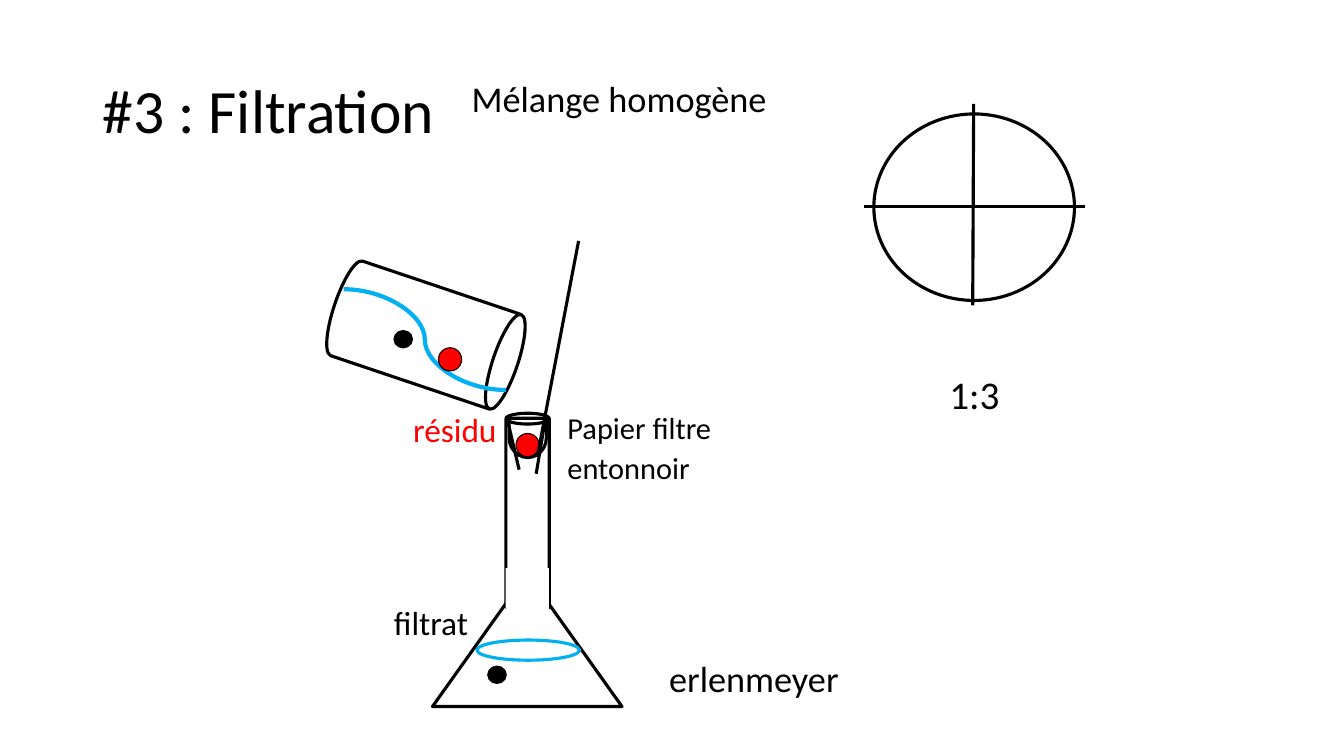
from dataclasses import dataclass

from lxml import etree
from pptx import Presentation
from pptx.dml.color import RGBColor
from pptx.enum.shapes import MSO_CONNECTOR as Connector
from pptx.enum.shapes import MSO_SHAPE as Shape
from pptx.enum.text import MSO_ANCHOR as Anchor
from pptx.oxml.ns import qn
from pptx.util import Pt


@dataclass(frozen=True)
class Theme:
    font: str = "Calibri"
    black: RGBColor = RGBColor(0, 0, 0)
    white: RGBColor = RGBColor(255, 255, 255)
    red: RGBColor = RGBColor(255, 0, 0)
    water: RGBColor = RGBColor(0, 176, 240)
    title: float = 44
    ratio: float = 28
    label: float = 25.9
    product: float = 23.8
    equipment: float = 21.7
    outline: float = 2.25
    wave: float = 3


THEME = Theme()


def add_label(slide, box, lines, size, color=THEME.black, spacing=0.9, before=10,
              anchor=Anchor.TOP):
    frame = slide.shapes.add_textbox(*map(Pt, box)).text_frame
    frame.word_wrap = True
    frame.vertical_anchor = anchor
    frame.text = "\n".join(lines)
    for paragraph in frame.paragraphs:
        paragraph.line_spacing = spacing
        paragraph.space_before = Pt(before)
        paragraph.font.name = THEME.font
        paragraph.font.size = Pt(size)
        paragraph.font.color.rgb = color


def add_part(slide, kind, box, fill=None, line=THEME.black, width=THEME.outline, rotation=0):
    part = slide.shapes.add_shape(kind, *map(Pt, box))
    part.shadow.inherit = False
    part.rotation = rotation
    if fill is None:
        part.fill.background()
    else:
        part.fill.solid()
        part.fill.fore_color.rgb = fill
    if line is None:
        part.line.fill.background()
    else:
        part.line.color.rgb = line
        part.line.width = Pt(width)


def add_stroke(slide, start, end, kind=Connector.STRAIGHT, color=THEME.black,
               width=THEME.outline):
    stroke = slide.shapes.add_connector(kind, *map(Pt, start + end))
    stroke.line.color.rgb = color
    stroke.line.width = Pt(width)
    etree.SubElement(stroke._element.spPr, qn("a:effectLst"))


def add_solute(slide, left, top):
    add_part(slide, Shape.OVAL, (left, top, 13, 12.2), THEME.black, width=1)


def add_residue(slide, left, top):
    add_part(slide, Shape.OVAL, (left, top, 16.6, 16.6), THEME.red, width=0.75)


def draw_beaker(slide):
    add_part(slide, Shape.CAN, (268.6, 170.6, 71.3, 137.5), THEME.white, rotation=108.6)
    add_stroke(slide, (245.5, 206.6), (361.4, 278.6), Connector.CURVE, THEME.water, THEME.wave)
    add_solute(slide, 281.5, 236.2)
    add_residue(slide, 313.2, 248.4)


def draw_erlenmeyer(slide):
    add_part(slide, Shape.CAN, (361.4, 295.2, 31, 141.8), THEME.white)
    add_part(slide, Shape.ISOSCELES_TRIANGLE, (308.9, 409.7, 135.4, 95))
    add_part(slide, Shape.RECTANGLE, (352.8, 414, 47.5, 31), THEME.white, None, rotation=90)
    add_part(slide, Shape.OVAL, (340.6, 457.2, 73.4, 14.4), line=THEME.water)
    add_solute(slide, 348.5, 475.9)


def draw_funnel(slide):
    add_part(slide, Shape.FLOWCHART_DELAY, (362.9, 299.5, 28.1, 26.6), rotation=90)
    add_residue(slide, 368.6, 309.6)
    add_stroke(slide, (413.3, 172.1), (383.8, 326.2))
    add_stroke(slide, (362.9, 301.7), (370.8, 335.5))
    add_stroke(slide, (389.5, 299.5), (383, 338.4))


def draw_filter_paper(slide):
    add_part(slide, Shape.OVAL, (624.2, 81.4, 143.3, 133.2))
    add_stroke(slide, (695.5, 74.2), (694.8, 218.2))
    add_stroke(slide, (617, 147.6), (774.7, 147.6))


def main():
    deck = Presentation()
    deck.slide_width, deck.slide_height = Pt(960), Pt(540)
    slide = deck.slides.add_slide(deck.slide_layouts[6])

    add_label(slide, (66.2, 28.8, 828, 104.4), ["#3 : Filtration"], THEME.title,
              before=0, anchor=Anchor.MIDDLE)
    add_label(slide, (329.8, 54.7, 241.2, 51.8), ["Mélange homogène"], THEME.label)
    draw_beaker(slide)
    draw_erlenmeyer(slide)
    draw_funnel(slide)
    add_label(slide, (288, 296.6, 77.8, 28.8), ["résidu"], THEME.product, THEME.red, 0.7)
    add_label(slide, (274.3, 434.2, 77.8, 28.8), ["filtrat"], THEME.product, spacing=0.7)
    add_label(slide, (470.9, 468.7, 144.7, 56.9), ["erlenmeyer"], THEME.label)
    add_label(slide, (398.2, 295.9, 144.7, 56.9), ["Papier filtre", "entonnoir"],
              THEME.equipment, spacing=0.7)
    draw_filter_paper(slide)
    add_label(slide, (671, 265, 69.8, 56.9), ["1:3"], THEME.ratio)

    deck.save("out.pptx")


if __name__ == "__main__":
    main()
